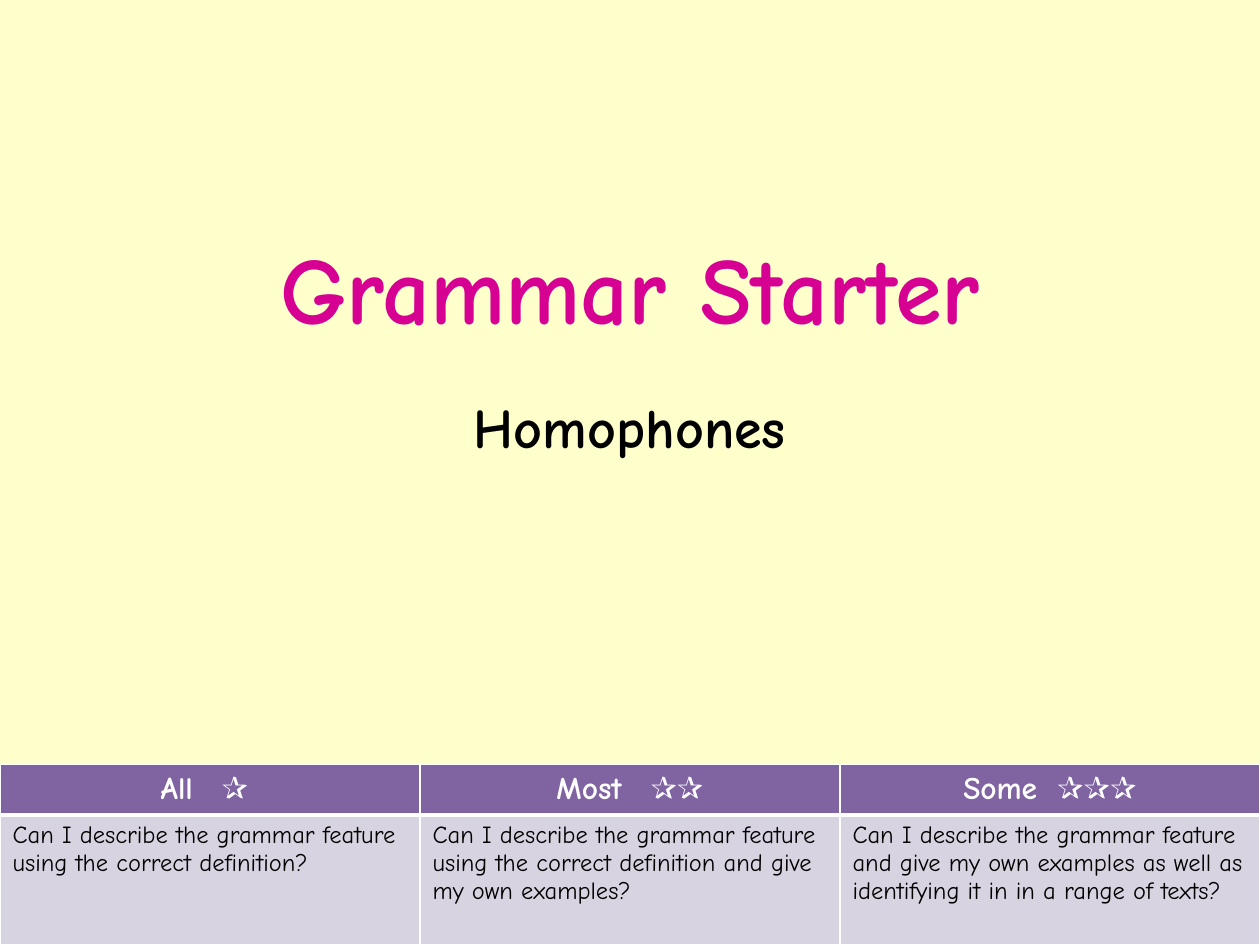
"""Build a grammar starter title slide with a table of graded goals."""
from lxml import etree
from pptx import Presentation
from pptx.dml.color import RGBColor
from pptx.enum.text import MSO_ANCHOR, PP_ALIGN
from pptx.oxml.ns import qn
from pptx.util import Pt

MID, TOP = MSO_ANCHOR.MIDDLE, MSO_ANCHOR.TOP
CENTER, LEFT = PP_ALIGN.CENTER, PP_ALIGN.LEFT
FONT = "Comic Neue"
WIDE, HIGH = 720, 540
COLORS = {"back": "FFFFCC", "title": "D60093", "text": "000000",
          "head": "8064A2", "body": "D8D3E0", "white": "FFFFFF"}

TITLES = [
    ("Grammar Starter", (54, 106, 612, 116), 54, "title", MID, 0),
    ("Homophones", (0, 220.5, 720, 138), 32, "text", TOP, 6.4),
]
GOALS = [
    ("All", "✰ ", 10, "Can I describe the grammar feature using the correct definition?"),
    ("Most", "✰✰", 10, "Can I describe the grammar feature using the correct definition "
     "and give my own examples?"),
    ("Some", "✰✰✰", 5, "Can I describe the grammar feature and give my own examples "
     "as well as identifying it in in a range of texts?"),
]
ROWS = [24, 74]
TABLE_TOP = 437


def color(key):
    return RGBColor.from_string(COLORS[key])


def style(para, size, key, bold, align):
    para.alignment = align
    font = para.font
    font.name, font.size, font.bold = FONT, Pt(size), bold
    font.color.rgb = color(key)


def add_title(slide, text, box, size, key, anchor, before):
    frame = slide.shapes.add_textbox(*map(Pt, box)).text_frame
    frame.word_wrap = True
    frame.vertical_anchor = anchor
    para = frame.paragraphs[0]
    para.text = text
    para.space_before = Pt(before)
    style(para, size, key, True, CENTER)


def paint(cell, key, base):
    props = cell._tc.get_or_add_tcPr()
    for side, width in (("L", 1), ("R", 1), ("T", 1), ("B", base)):
        line = etree.SubElement(props, qn(f"a:ln{side}"), w=str(Pt(width)))
        fill = etree.SubElement(line, qn("a:solidFill"))
        etree.SubElement(fill, qn("a:srgbClr"), val=COLORS["white"])
    cell.fill.solid()
    cell.fill.fore_color.rgb = color(key)


def add_goals(slide):
    table = slide.shapes.add_table(
        len(ROWS), len(GOALS), 0, Pt(TABLE_TOP), Pt(WIDE), Pt(sum(ROWS))).table
    for row, height in zip(table.rows, ROWS):
        row.height = Pt(height)
    for col, (name, stars, gap, goal) in enumerate(GOALS):
        table.columns[col].width = Pt(WIDE / len(GOALS))
        head, body = table.cell(0, col), table.cell(1, col)
        para = head.text_frame.paragraphs[0]
        for text, space in ((name, 0), (" ", gap), (stars, 0)):
            run = para.add_run()
            run.text = text
            if space:
                run._r.get_or_add_rPr().set("spc", str(space * 100))
        style(para, 18, "white", True, CENTER)
        paint(head, "head", 3)
        body.text = goal
        style(body.text_frame.paragraphs[0], 14, "text", False, LEFT)
        paint(body, "body", 1)
        body._tc.tcPr.find(qn("a:lnT")).set("w", str(Pt(3)))


def main():
    deck = Presentation()
    deck.slide_width, deck.slide_height = Pt(WIDE), Pt(HIGH)
    slide = deck.slides.add_slide(deck.slide_layouts[6])
    back = slide.background.fill
    back.solid()
    back.fore_color.rgb = color("back")
    for item in TITLES:
        add_title(slide, *item)
    add_goals(slide)
    deck.save("out.pptx")


if __name__ == "__main__":
    main()
